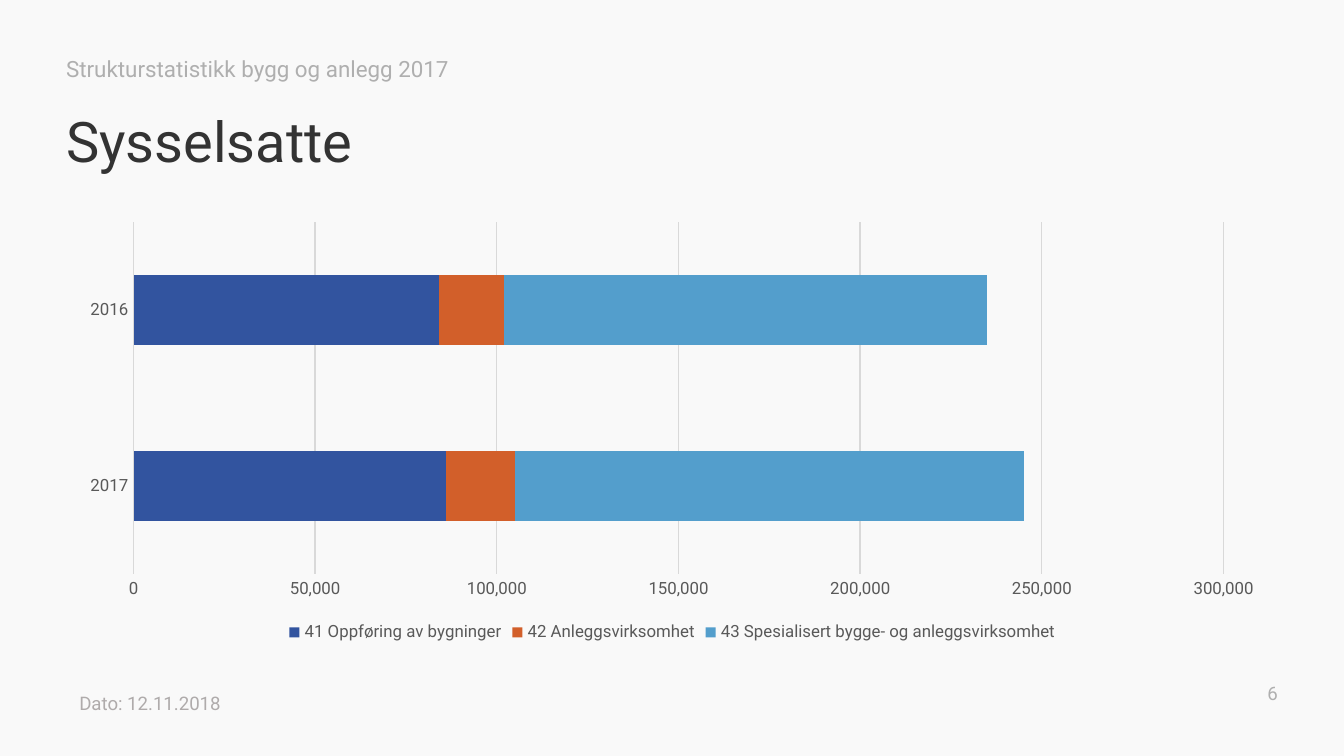
from dataclasses import dataclass

from pptx import Presentation
from pptx.chart.data import CategoryChartData
from pptx.dml.color import RGBColor
from pptx.enum.chart import XL_CHART_TYPE, XL_LEGEND_POSITION, XL_TICK_MARK
from pptx.enum.text import PP_ALIGN
from pptx.util import Cm, Pt

STACKED_BAR = XL_CHART_TYPE.BAR_STACKED
LEGEND_BOTTOM = XL_LEGEND_POSITION.BOTTOM
NO_TICK = XL_TICK_MARK.NONE
LEFT, RIGHT = PP_ALIGN.LEFT, PP_ALIGN.RIGHT


@dataclass(frozen=True)
class Theme:
    """Colours, type sizes and margins of the slide."""
    font: str = "Roboto"
    background: str = "F9F9F9"
    title: str = "333333"
    muted: str = "AFAFAF"
    date: str = "AFABAB"
    label: str = "595959"
    grid: str = "D9D9D9"
    title_size: float = 30
    subtitle_size: float = 12
    footer_size: float = 10
    label_size: float = 9
    line_width: float = 0.75
    margin: float = 1.25
    content_width: float = 22.9


THEME = Theme()
YEARS = ("2017", "2016")
EMPLOYED = (
    ("41 Oppføring av bygninger", (86000, 84000), "32549F"),
    ("42 Anleggsvirksomhet", (19000, 18000), "D25F2A"),
    ("43 Spesialisert bygge- og anleggsvirksomhet", (140000, 133000), "539ECC"),
)


def style_font(font, size, color):
    """Apply the theme font with a size and colour."""
    font.name = THEME.font
    font.size = Pt(size)
    font.color.rgb = RGBColor.from_string(color)


def style_line(line):
    """Apply the thin grey chart line."""
    line.color.rgb = RGBColor.from_string(THEME.grid)
    line.width = Pt(THEME.line_width)


def add_text(slide, text, box, size, color, align=LEFT, spacing=1.0, inset=(0, 0)):
    """Add a one-paragraph text box; box and inset are in centimetres."""
    shape = slide.shapes.add_textbox(*map(Cm, box))
    frame = shape.text_frame
    frame.word_wrap = True
    frame.margin_left = frame.margin_right = Cm(inset[0])
    frame.margin_top = frame.margin_bottom = Cm(inset[1])
    frame.text = text
    paragraph = frame.paragraphs[0]
    paragraph.alignment = align
    paragraph.line_spacing = spacing
    style_font(paragraph.runs[0].font, size, color)


def style_axis(axis):
    """Remove tick marks and set the label font of an axis."""
    axis.major_tick_mark = axis.minor_tick_mark = NO_TICK
    style_font(axis.tick_labels.font, THEME.label_size, THEME.label)


def add_employment_chart(slide, box):
    """Add the stacked bars of employed persons by industry and year."""
    data = CategoryChartData(number_format="#,##0")
    data.categories = YEARS
    for name, values, _ in EMPLOYED:
        data.add_series(name, values)
    chart = slide.shapes.add_chart(STACKED_BAR, *map(Cm, box), data).chart
    style_font(chart.font, THEME.label_size, THEME.label)
    chart.has_title = False

    chart.has_legend = True
    chart.legend.position = LEGEND_BOTTOM
    chart.legend.include_in_layout = False
    style_font(chart.legend.font, THEME.label_size, THEME.label)

    plot = chart.plots[0]
    plot.gap_width = 150
    plot.overlap = 100
    plot.vary_by_categories = False
    for series, (_, _, color) in zip(plot.series, EMPLOYED):
        series.format.fill.solid()
        series.format.fill.fore_color.rgb = RGBColor.from_string(color)

    style_axis(chart.category_axis)
    style_line(chart.category_axis.format.line)

    value_axis = chart.value_axis
    style_axis(value_axis)
    value_axis.minimum_scale = 0
    value_axis.maximum_scale = 300000
    value_axis.major_unit = 50000
    value_axis.tick_labels.number_format = "#,##0"
    value_axis.tick_labels.number_format_is_linked = False
    value_axis.format.line.fill.background()
    value_axis.has_major_gridlines = True
    style_line(value_axis.major_gridlines.format.line)


def main():
    """Build and save the slide."""
    presentation = Presentation()
    presentation.slide_width = Cm(25.4)
    presentation.slide_height = Cm(14.29)
    slide = presentation.slides.add_slide(presentation.slide_layouts[6])
    slide.background.fill.solid()
    slide.background.fill.fore_color.rgb = RGBColor.from_string(THEME.background)

    left, width = THEME.margin, THEME.content_width
    add_text(slide, "Strukturstatistikk bygg og anlegg 2017", (left, 0.97, 16.5, 0.76),
             THEME.subtitle_size, THEME.muted, spacing=1.14)
    add_text(slide, "Sysselsatte", (left, 2.16, width, 1.3),
             THEME.title_size, THEME.title, spacing=0.9)
    add_employment_chart(slide, (left, 4.04, width, 8.2))
    add_text(slide, "Dato: 12.11.2018", (left, 12.95, 5.46, 0.69),
             THEME.footer_size, THEME.date, inset=(0.25, 0.13))
    number_width = 1.5
    add_text(slide, "6", (left + width - number_width, 12.88, number_width, 0.76),
             THEME.footer_size, THEME.muted, align=RIGHT)
    presentation.save("out.pptx")


if __name__ == "__main__":
    main()
